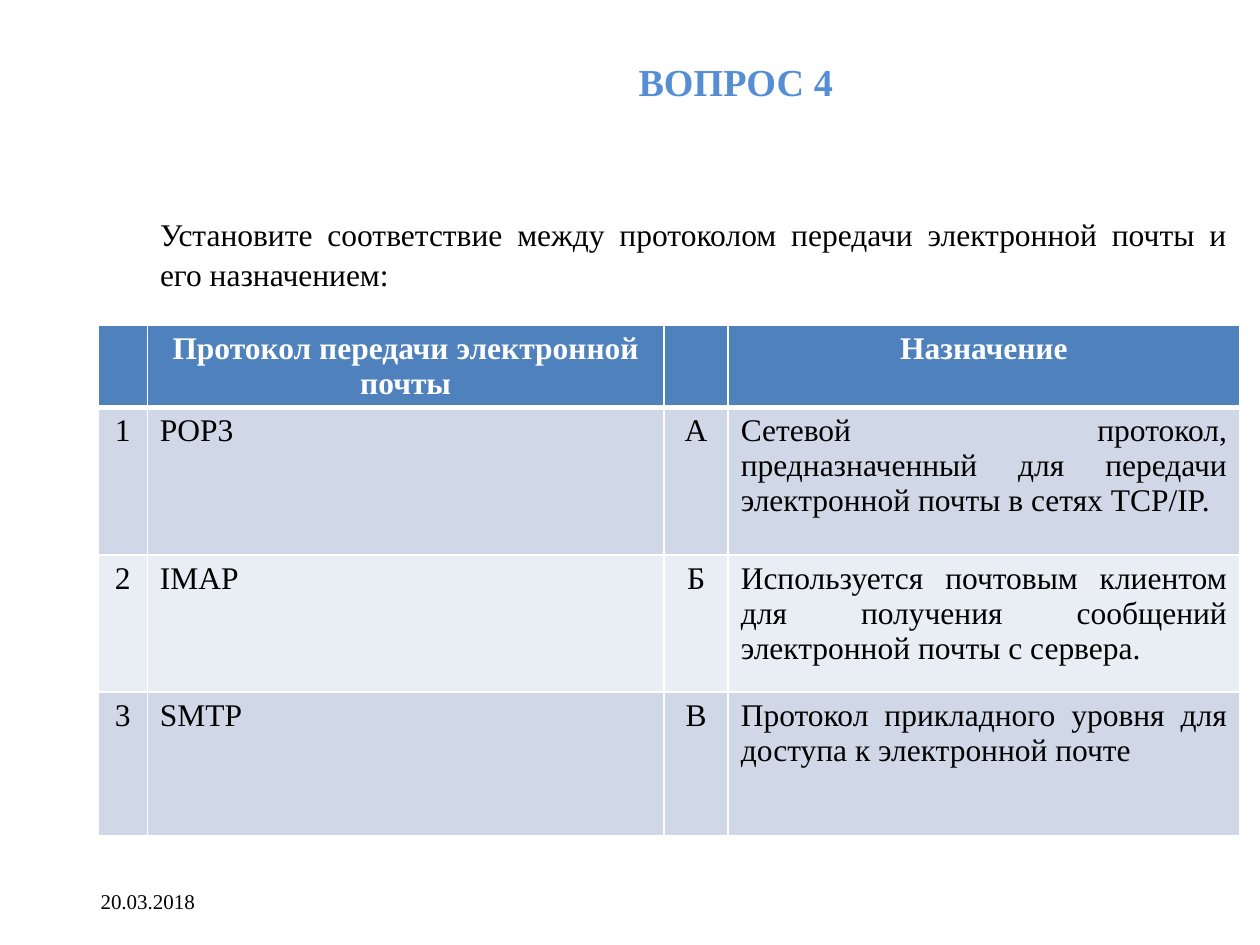
import pptx
import pptx.dml.color
import pptx.enum.text
import pptx.oxml
import pptx.oxml.ns
import pptx.util
from dataclasses import dataclass

ALIGN = pptx.enum.text.PP_ALIGN
ANCHOR = pptx.enum.text.MSO_ANCHOR


@dataclass(frozen=True)
class Theme:
    font: str = "Times New Roman"
    ink: str = "000000"
    title: str = "558ED5"
    head: str = "4F81BD"
    bands: tuple = ("D0D8E8", "E9EDF4")
    white: str = "FFFFFF"
    big: float = 21.8
    text: float = 18
    small: float = 12


class Sheet:
    """Places elements on a grid of 100 columns by 75 rows."""

    def __init__(self, deck, theme):
        self.theme = theme
        self.col = deck.slide_width / 100
        self.row = deck.slide_height / 75
        self.slide = deck.slides.add_slide(deck.slide_layouts[1])

    def box(self, left, top, width, height):
        return (round(left * self.col), round(top * self.row),
                round(width * self.col), round(height * self.row))

    def place(self, shape, area):
        shape.left, shape.top, shape.width, shape.height = self.box(*area)

    def words(self, frame, text, size, color, align=ALIGN.LEFT, bold=False):
        frame.text = text
        para = frame.paragraphs[0]
        para.alignment = align
        for run in para.runs:
            font = run.font
            font.name, font.size, font.bold = self.theme.font, pptx.util.Pt(size), bold
            font.color.rgb = pptx.dml.color.RGBColor.from_string(color)
        return para

    def title(self, text, area):
        shape = self.slide.shapes.title
        self.place(shape, area)
        frame = shape.text_frame
        frame.vertical_anchor = ANCHOR.MIDDLE
        frame.margin_top = pptx.util.Inches(0.1)
        self.words(frame, text, self.theme.big, self.theme.title, ALIGN.CENTER, True)

    def body(self, text, area):
        shape = self.slide.placeholders[1]
        self.place(shape, area)
        para = self.words(shape.text_frame, text, self.theme.text,
                          self.theme.ink, ALIGN.JUSTIFY)
        para.line_spacing = 1.05
        para.space_before = pptx.util.Pt(0)
        props = para._p.get_or_add_pPr()
        props.set("marL", "0")
        props.set("indent", "0")
        props.append(pptx.oxml.parse_xml(
            f'<a:buNone {pptx.oxml.ns.nsdecls("a")}/>'))

    def label(self, text, area):
        frame = self.slide.shapes.add_textbox(*self.box(*area)).text_frame
        frame.word_wrap = True
        frame.vertical_anchor = ANCHOR.MIDDLE
        self.words(frame, text, self.theme.small, self.theme.ink)

    def edge(self, cell, side, width):
        props = cell._tc.get_or_add_tcPr()
        props.append(pptx.oxml.parse_xml(
            f'<a:{side} {pptx.oxml.ns.nsdecls("a")} w="{pptx.util.Pt(width)}">'
            f'<a:solidFill><a:srgbClr val="{self.theme.white}"/></a:solidFill>'
            f'</a:{side}>'))

    def table(self, rows, spot, cols, highs, aligns):
        theme = self.theme
        area = self.box(*spot, sum(cols), sum(highs))
        grid = self.slide.shapes.add_table(len(rows), len(cols), *area).table
        for col, width in zip(grid.columns, cols):
            col.width = round(width * self.col)
        for row, high in zip(grid.rows, highs):
            row.height = round(high * self.row)
        for r, row in enumerate(rows):
            head = r == 0
            fill = theme.head if head else theme.bands[(r - 1) % 2]
            for c, text in enumerate(row):
                cell = grid.cell(r, c)
                # Borders come before the fill in the cell's XML
                for side in ("lnL", "lnR", "lnT", "lnB"):
                    heavy = (head and side == "lnB") or (r == 1 and side == "lnT")
                    self.edge(cell, side, 3 if heavy else 1)
                cell.fill.solid()
                cell.fill.fore_color.rgb = pptx.dml.color.RGBColor.from_string(fill)
                if text:
                    self.words(cell.text_frame, text, theme.text,
                               theme.white if head else theme.ink,
                               ALIGN.CENTER if head else aligns[c], head)


def main():
    deck = pptx.Presentation()
    deck.slide_width = pptx.util.Inches(10)
    deck.slide_height = pptx.util.Inches(7.5)
    sheet = Sheet(deck, Theme())

    # Question
    sheet.title("ВОПРОС 4", (23.4, 2.3, 70, 7.8))
    sheet.body("Установите соответствие между протоколом передачи "
               "электронной почты и его назначением:", (11.7, 16.4, 86.7, 50.8))

    # Protocols and purposes to match
    rows = [
        ("", "Протокол передачи электронной почты", "", "Назначение"),
        ("1", "POP3", "А", "Сетевой протокол, предназначенный для передачи "
                           "электронной почты в сетях TCP/IP."),
        ("2", "IMAP", "Б", "Используется почтовым клиентом для получения "
                           "сообщений электронной почты с сервера."),
        ("3", "SMTP", "В", "Протокол прикладного уровня для доступа "
                           "к электронной почте"),
    ]
    sheet.table(rows, (7.8, 25.8), (3.9, 41, 5.1, 40.6), (6.5, 11.7, 10.9, 11.4),
                (ALIGN.CENTER, ALIGN.LEFT, ALIGN.CENTER, ALIGN.JUSTIFY))

    # Date
    sheet.label("20.03.2018", (7, 69.5, 23.3, 4))
    deck.save("out.pptx")


if __name__ == "__main__":
    main()
